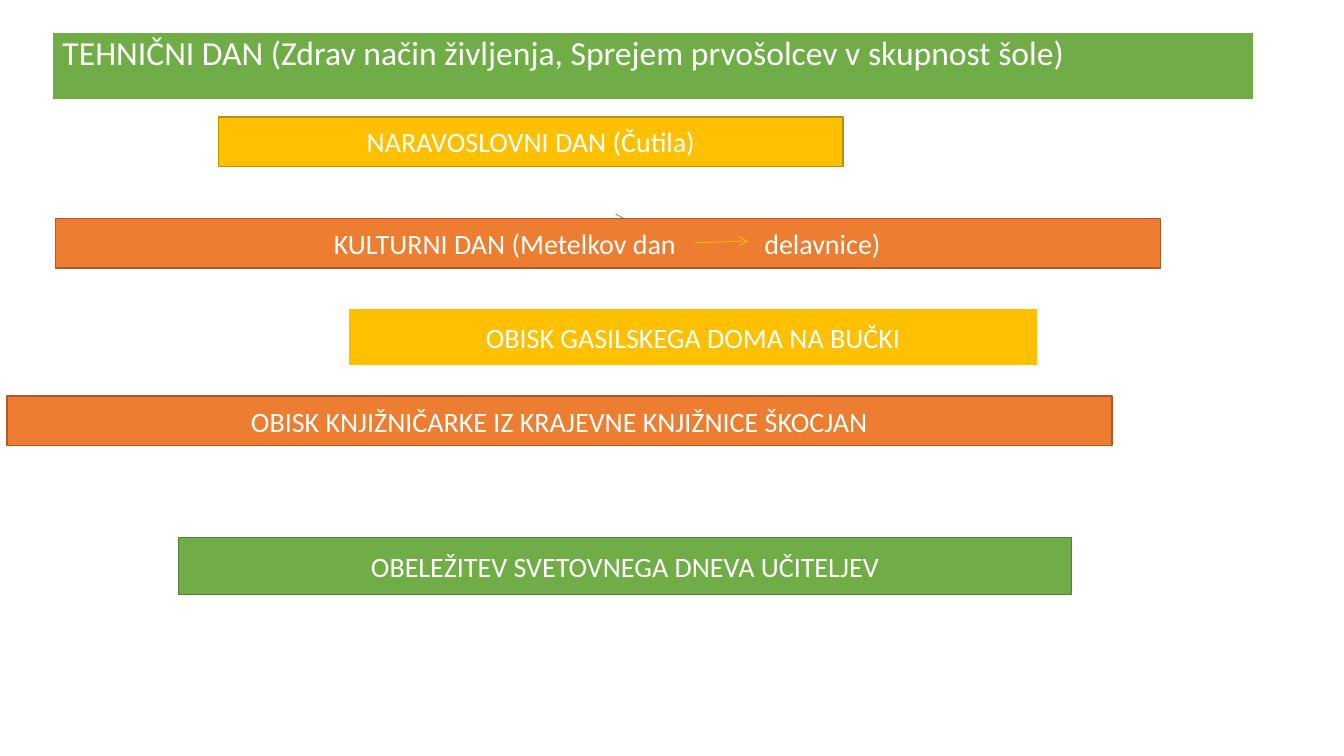
from lxml.etree import SubElement
from pptx import Presentation
from pptx.dml.color import RGBColor
from pptx.enum.shapes import MSO_CONNECTOR as Connector, MSO_SHAPE as Shape
from pptx.enum.text import MSO_ANCHOR as Anchor, MSO_AUTO_SIZE as AutoSize, PP_ALIGN as Align
from pptx.oxml.ns import qn
from pptx.util import Inches, Pt

WIDTH, HEIGHT = Inches(13.33), Inches(7.5)
WHITE, GREEN, YELLOW, ORANGE, BLUE = "FFFFFF", "70AD47", "FFC000", "ED7D31", "4472C4"
DARK_GREEN, DARK_YELLOW, DARK_ORANGE = "538035", "BD8E00", "AF5C24"
FRAME = {"word_wrap": True, "auto_size": AutoSize.NONE, "vertical_anchor": Anchor.MIDDLE}
FONT = {"name": "Calibri", "size": Pt(20), "bold": False}


def across(percent):
    return round(WIDTH * percent / 100)


def down(percent):
    return round(HEIGHT * percent / 100)


def apply_format(target, values):
    for name, value in values.items():
        setattr(target, name, value)


def paint(color_format, color):
    color_format.rgb = RGBColor.from_string(color)


def style_box(shape, place, text, fill, line, frame=None, paragraph_format=None, font=None):
    """Place, colour and label a box; place is in percent of the slide."""
    left, top, width, height = place
    apply_format(shape, {"left": across(left), "top": down(top),
                         "width": across(width), "height": down(height)})
    shape.fill.solid()
    paint(shape.fill.fore_color, fill)
    line_color, line_width = line
    paint(shape.line.color, line_color)
    shape.line.width = Pt(line_width)
    text_frame = shape.text_frame
    text_frame.text = text
    apply_format(text_frame, FRAME | (frame or {}))
    paragraph = text_frame.paragraphs[0]
    apply_format(paragraph, {"alignment": Align.CENTER} | (paragraph_format or {}))
    run_font = paragraph.runs[0].font
    apply_format(run_font, FONT | (font or {}))
    paint(run_font.color, WHITE)


def add_bar(slide, place, text, fill, line, **formats):
    shape = slide.shapes.add_shape(Shape.RECTANGLE, 0, 0, 0, 0)
    shape.shadow.inherit = False
    style_box(shape, place, text, fill, line, **formats)
    return shape


def add_tab_stop(paragraph, position):
    tabs = SubElement(paragraph._p.get_or_add_pPr(), qn("a:tabLst"))
    SubElement(tabs, qn("a:tab"), pos=str(position), algn="l")


def add_arrow(slide, start, end, color):
    arrow = slide.shapes.add_connector(
        Connector.STRAIGHT, across(start[0]), down(start[1]), across(end[0]), down(end[1]))
    paint(arrow.line.color, color)
    arrow.line.width = Pt(0.5)
    SubElement(arrow.line._get_or_add_ln(), qn("a:tailEnd"), type="arrow")
    SubElement(arrow._element.spPr, qn("a:effectLst"))


def main():
    presentation = Presentation()
    apply_format(presentation, {"slide_width": WIDTH, "slide_height": HEIGHT})
    slide = presentation.slides.add_slide(presentation.slide_layouts[5])

    style_box(slide.shapes.title, (3.9, 4.27, 89.42, 8.93),
              "TEHNIČNI DAN (Zdrav način življenja, Sprejem prvošolcev v skupnost šole)",
              GREEN, (WHITE, 1.5),
              frame={"vertical_anchor": Anchor.TOP, "margin_top": 0},
              paragraph_format={"alignment": Align.LEFT, "line_spacing": 1.0, "space_before": Pt(0)},
              font={"size": Pt(24)})
    add_bar(slide, (16.28, 15.47, 46.44, 6.53), "NARAVOSLOVNI DAN (Čutila)",
            YELLOW, (DARK_YELLOW, 1))

    add_arrow(slide, (41.64, 28.93), (46.51, 28.93), BLUE)
    culture_bar = add_bar(slide, (4.13, 28.93, 82.22, 6.53),
                          "KULTURNI DAN (Metelkov dan\tdelavnice)",
                          ORANGE, (DARK_ORANGE, 1),
                          frame={"margin_left": across(20.71)},
                          paragraph_format={"alignment": Align.LEFT})
    add_tab_stop(culture_bar.text_frame.paragraphs[0], across(32.03))
    add_arrow(slide, (51.61, 32.13), (55.66, 31.87), YELLOW)

    for place, text, fill, line in (
        ((25.88, 40.8, 51.39, 7.6), "OBISK GASILSKEGA DOMA NA BUČKI", YELLOW, (WHITE, 1.5)),
        ((0.53, 52.4, 82.22, 6.53), "OBISK KNJIŽNIČARKE IZ KRAJEVNE KNJIŽNICE ŠKOCJAN",
         ORANGE, (DARK_ORANGE, 1)),
        ((13.28, 71.07, 66.47, 7.6), "OBELEŽITEV SVETOVNEGA DNEVA UČITELJEV",
         GREEN, (DARK_GREEN, 1)),
    ):
        add_bar(slide, place, text, fill, line)
    presentation.save("out.pptx")


if __name__ == "__main__":
    main()
